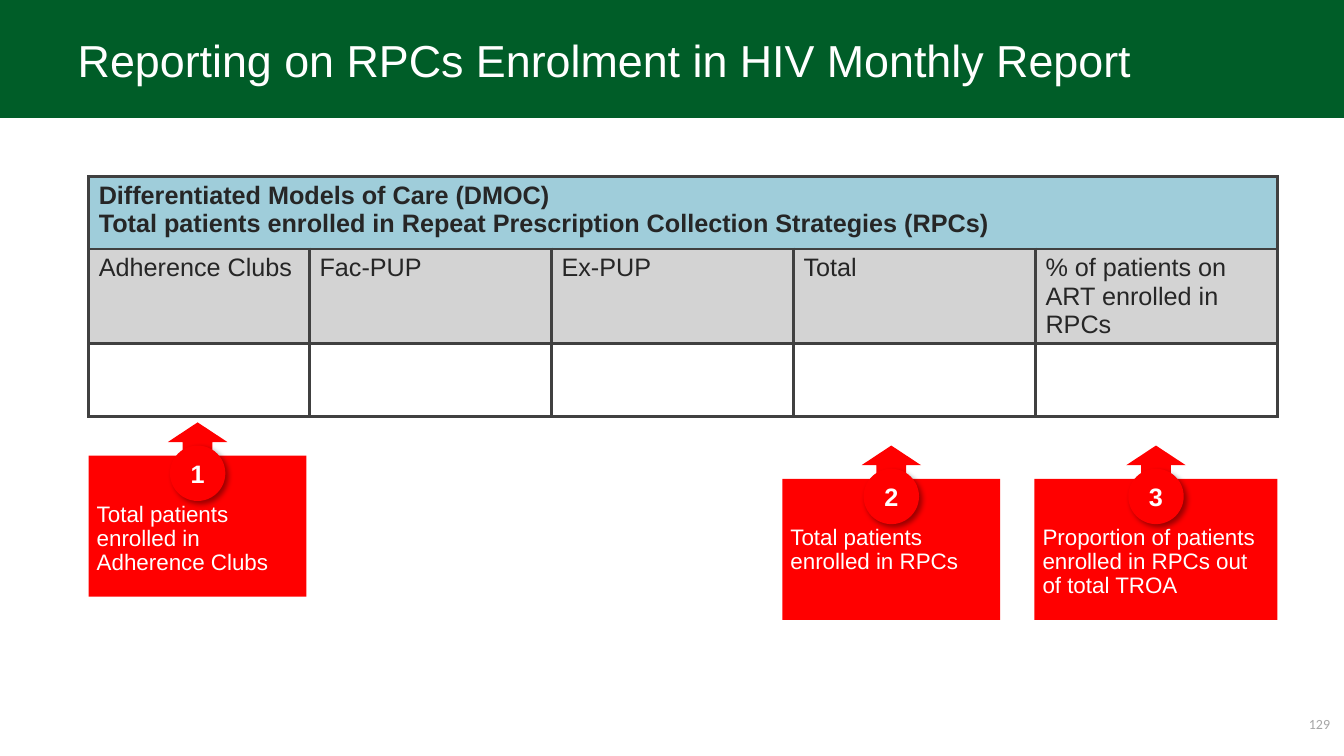
from dataclasses import dataclass
from lxml.etree import SubElement
from pptx import Presentation
from pptx.dml.color import RGBColor
from pptx.enum.shapes import MSO_SHAPE
from pptx.enum.text import MSO_ANCHOR, PP_ALIGN
from pptx.oxml import parse_xml
from pptx.oxml.ns import nsdecls, qn
from pptx.util import Inches, Pt

# Content
TITLE = "Reporting on RPCs Enrolment in HIV Monthly Report"
BANNER = ["Differentiated Models of Care (DMOC)",
          "Total patients enrolled in Repeat Prescription Collection Strategies (RPCs)"]
HEADS = ["Adherence Clubs", "Fac-PUP", "Ex-PUP", "Total",
         "% of patients on ART enrolled in RPCs"]
PAGE = "129"
# Callouts: text, left, top, width
CALLS = [("Total patients enrolled in Adherence Clubs", 0.88, 4.52, 2.16),
         ("Total patients enrolled in RPCs", 7.76, 4.75, 2.16),
         ("Proportion of patients enrolled in RPCs out of total TROA", 10.26, 4.75, 2.41)]


@dataclass
class Theme:
    green: str = "005D28"
    blue: str = "9FCDDA"
    grey: str = "D3D3D3"
    white: str = "FFFFFF"
    red: str = "FF0000"
    ink: str = "262626"
    rule: str = "404040"
    faint: str = "A6A6A6"
    font: str = "Arial"
    foot: str = "Calibri"
    head: int = 32
    body: int = 18
    note: int = 16
    tiny: int = 10


T = Theme()
WIDE, HIGH = 13.33, 7.5
LEFT, TOP = 0.88, 1.75
COLS = [2.19] + [2.4] * 4
ROWS = [0.72, 0.94, 0.72]
BOX, ARROW, DISC = 1.4, (0.59, 0.39), 0.55


def box(*nums):
    return [Inches(n) for n in nums]


def write(frame, lines, size, color, bold=False, font=T.font, align=None):
    frame.text = "\n".join(lines)
    for para in frame.paragraphs:
        para.alignment = align
        para.font.size, para.font.name, para.font.bold = Pt(size), font, bold
        para.font.color.rgb = RGBColor.from_string(color)


def inset(frame, left, top, right, low):
    frame.margin_left, frame.margin_top = Inches(left), Inches(top)
    frame.margin_right, frame.margin_bottom = Inches(right), Inches(low)


def paint(item, color):
    item.fill.solid()
    item.fill.fore_color.rgb = RGBColor.from_string(color)


def block(slide, kind, place, color):
    shape = slide.shapes.add_shape(kind, *box(*place))
    paint(shape, color)
    shape.line.fill.background()
    shape.shadow.inherit = False
    return shape


def border(cell):
    props = cell._tc.get_or_add_tcPr()
    for spot, side in enumerate(("lnL", "lnR", "lnT", "lnB")):
        line = parse_xml(f'<a:{side} {nsdecls("a")} w="{Pt(2.25)}"><a:solidFill>'
                         f'<a:srgbClr val="{T.rule}"/></a:solidFill></a:{side}>')
        props.insert(spot, line)


def shade(shape):
    effects = shape._element.spPr.find(qn("a:effectLst"))
    glow = SubElement(effects, qn("a:outerShdw"), blurRad=str(Pt(4)),
                      dist=str(Pt(3)), dir=str(45 * 60000))
    tint = SubElement(glow, qn("a:srgbClr"), val="000000")
    SubElement(tint, qn("a:alpha"), val="40000")


def header(slide):
    band = block(slide, MSO_SHAPE.RECTANGLE, (0, 0, WIDE, 1.17), T.green)
    slide.shapes._spTree.insert(2, band._element)  # behind the title
    title = slide.shapes.title
    title.left, title.top, title.width, title.height = box(0.67, 0.23, 12, 0.72)
    write(title.text_frame, [TITLE], T.head, T.white, align=PP_ALIGN.LEFT)
    title.text_frame.vertical_anchor = MSO_ANCHOR.MIDDLE


def grid(slide):
    place = box(LEFT, TOP, sum(COLS), sum(ROWS))
    table = slide.shapes.add_table(len(ROWS), len(COLS), *place).table
    for col, width in zip(table.columns, COLS):
        col.width = Inches(width)
    for row, height, color in zip(table.rows, ROWS, (T.blue, T.grey, T.white)):
        row.height = Inches(height)
        for cell in row.cells:
            paint(cell, color)
            border(cell)
    table.cell(0, 0).merge(table.cell(0, len(COLS) - 1))
    write(table.cell(0, 0).text_frame, BANNER, T.body, T.ink, bold=True)
    for col, head in enumerate(HEADS):
        write(table.cell(1, col).text_frame, [head], T.body, T.ink)


def callout(slide, num, text, left, top, width):
    mid = left + width / 2
    # Red panel
    panel = block(slide, MSO_SHAPE.RECTANGLE, (left, top, width, BOX), T.red)
    frame = panel.text_frame
    frame.word_wrap, frame.vertical_anchor = True, MSO_ANCHOR.TOP
    inset(frame, 0.08, 0.47, 0.08, 0.35)
    write(frame, [text], T.note, T.white, align=PP_ALIGN.LEFT)
    frame.paragraphs[0].line_spacing = 0.9
    # Arrow up to the table
    wide, high = ARROW
    block(slide, MSO_SHAPE.UP_ARROW, (mid - wide / 2, top - 0.33, wide, high), T.red)
    # Numbered disc
    disc = block(slide, MSO_SHAPE.OVAL, (mid - DISC / 2, top - 0.1, DISC, DISC), T.red)
    shade(disc)
    inset(disc.text_frame, 0, 0, 0, 0)
    disc.text_frame.vertical_anchor = MSO_ANCHOR.MIDDLE
    write(disc.text_frame, [str(num)], T.body, T.white, bold=True, align=PP_ALIGN.CENTER)


def main():
    deck = Presentation()
    deck.slide_width, deck.slide_height = box(WIDE, HIGH)
    slide = deck.slides.add_slide(deck.slide_layouts[5])
    header(slide)
    grid(slide)
    # Page number
    foot = slide.shapes.add_textbox(*box(10.18, 7.05, 3.11, 0.4)).text_frame
    foot.word_wrap = True
    write(foot, [PAGE], T.tiny, T.faint, font=T.foot, align=PP_ALIGN.RIGHT)
    for num, call in enumerate(CALLS, 1):
        callout(slide, num, *call)
    deck.save("out.pptx")


if __name__ == "__main__":
    main()
